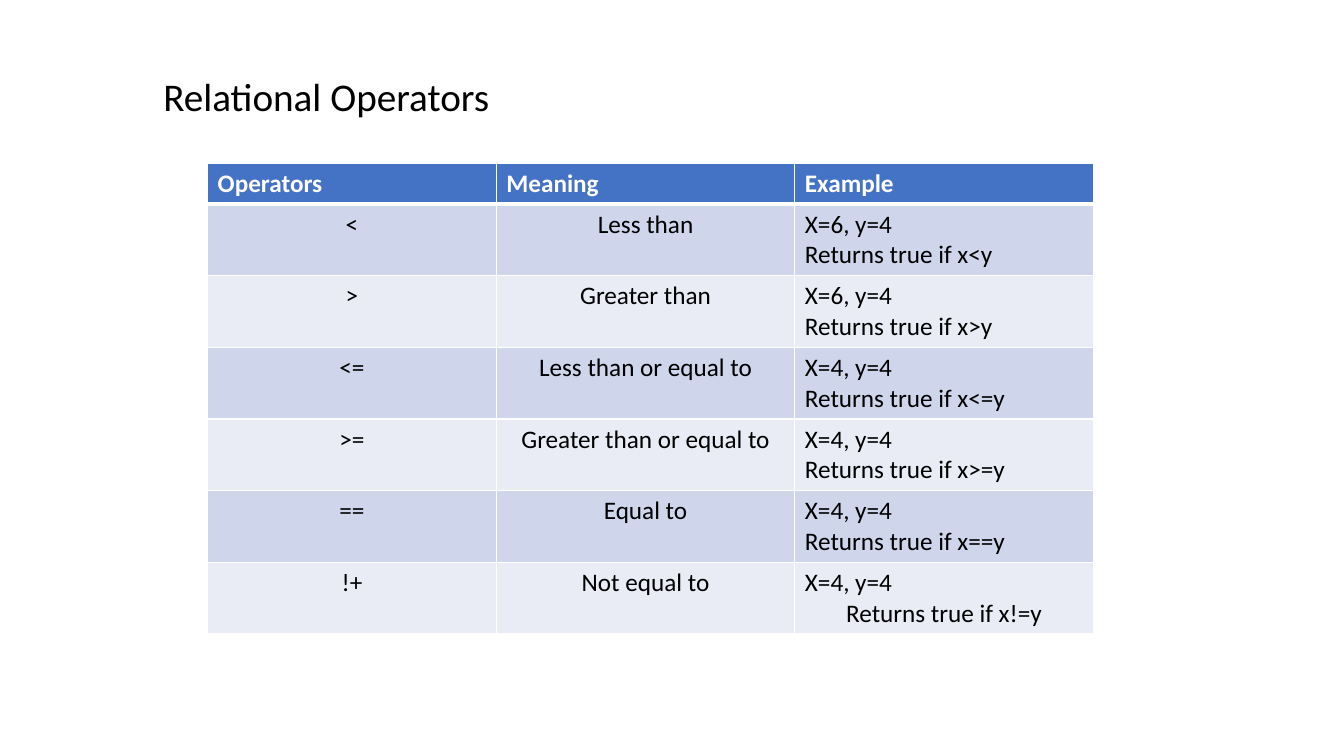
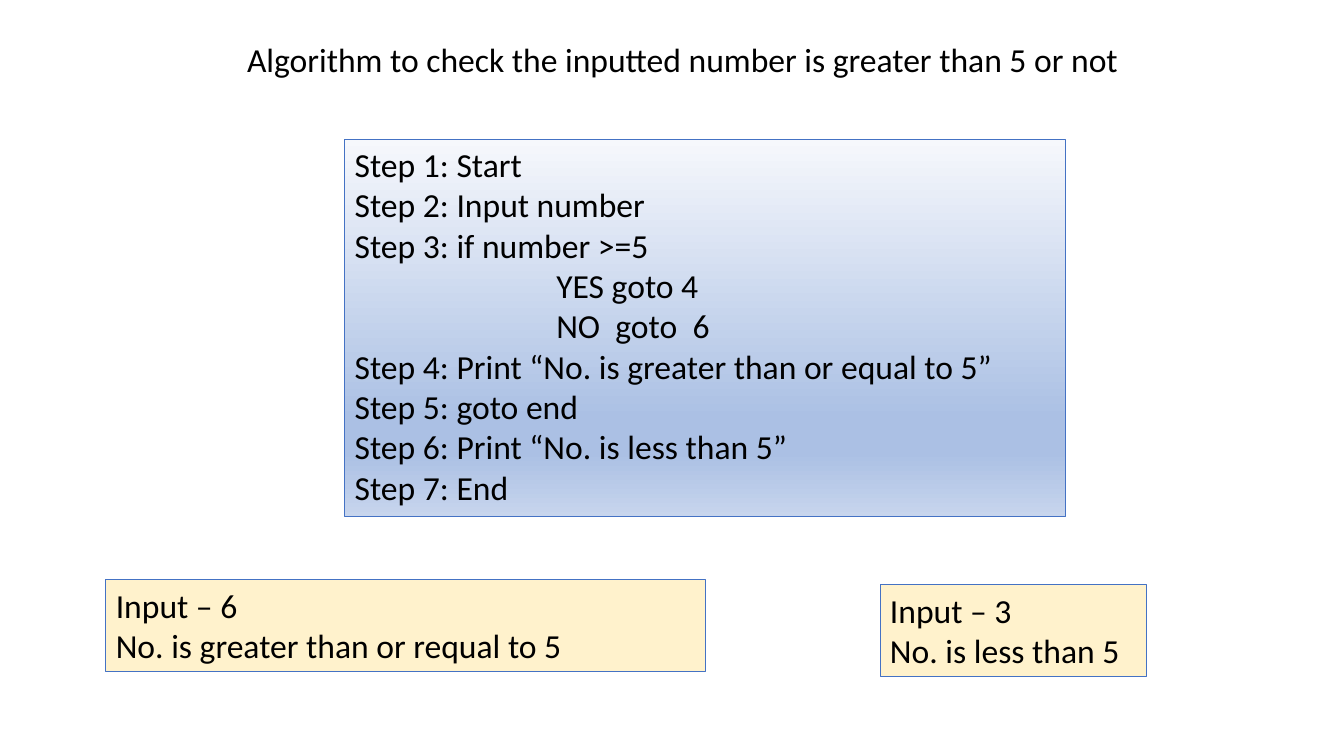
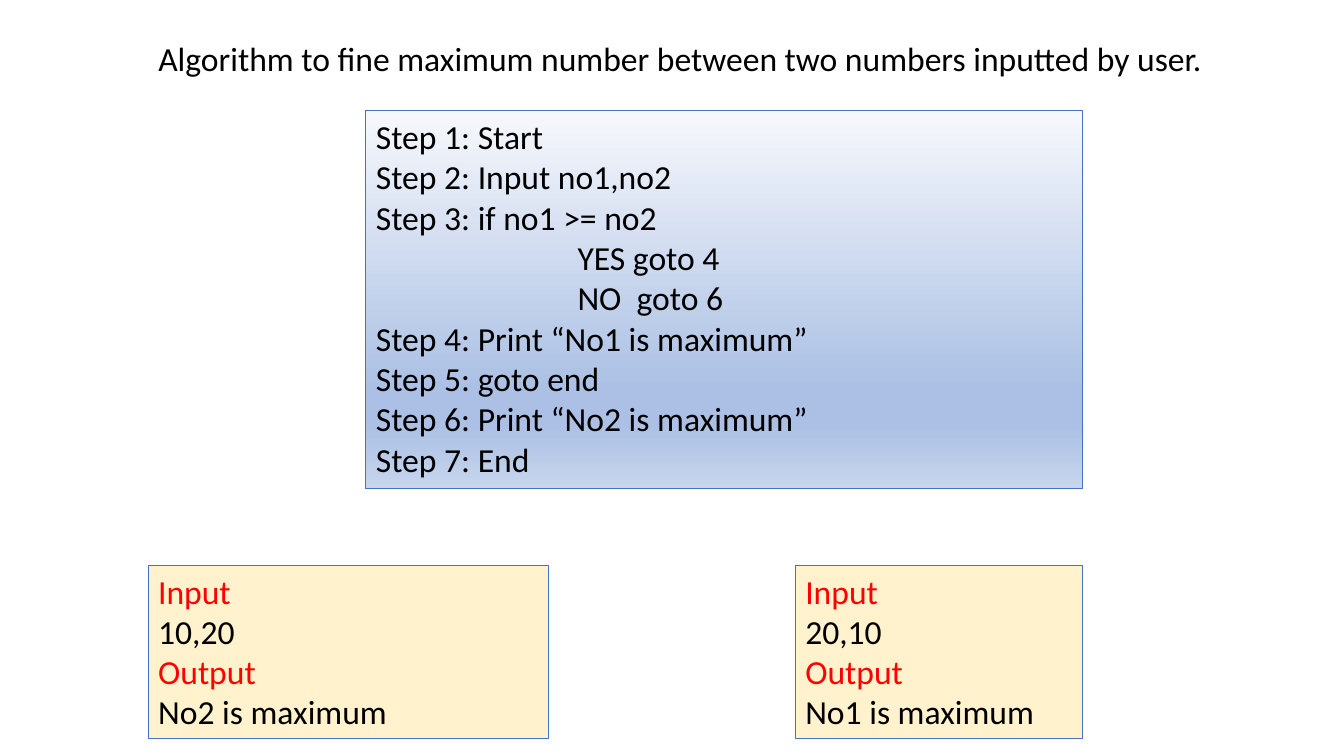
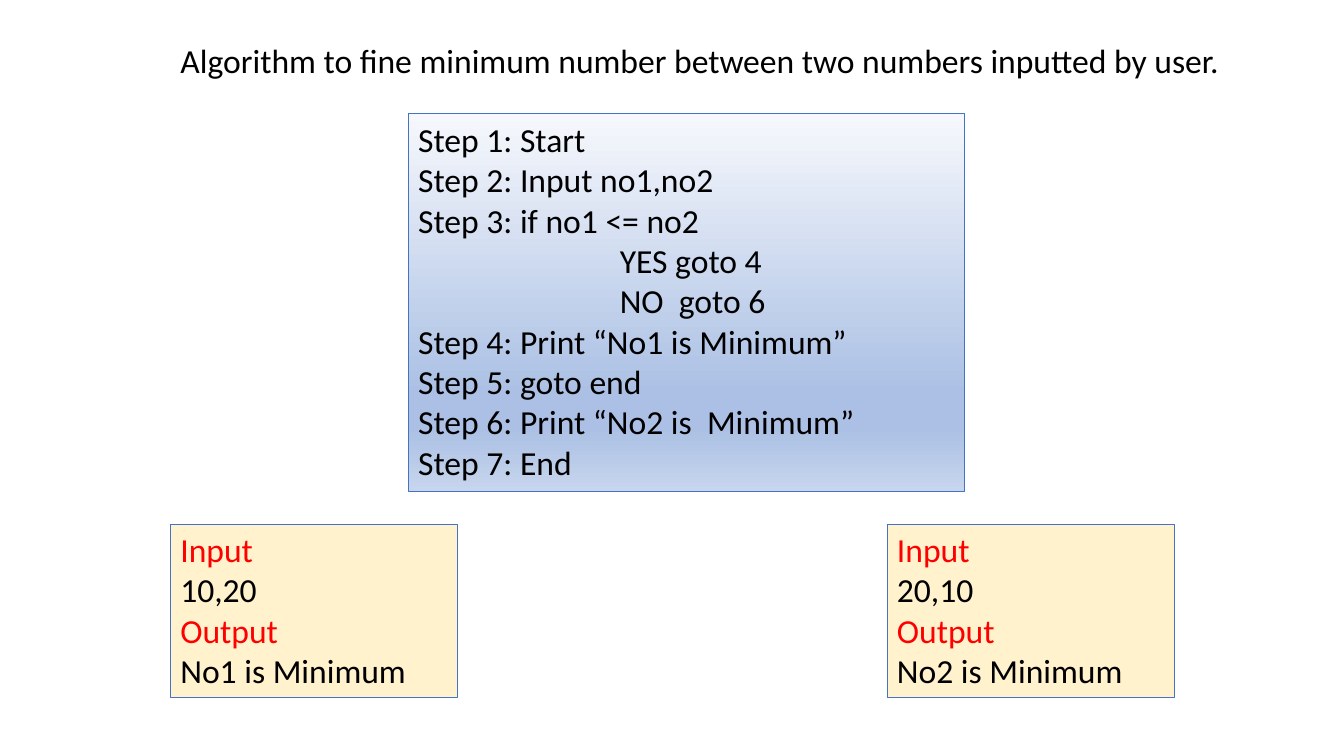
from typing import NamedTuple

from lxml.etree import SubElement
from pptx import Presentation
from pptx.dml.color import RGBColor
from pptx.enum.shapes import MSO_SHAPE
from pptx.enum.text import MSO_ANCHOR, MSO_AUTO_SIZE, PP_ALIGN
from pptx.oxml.ns import qn
from pptx.util import Inches, Pt

FONT = "Calibri"
BLACK, WHITE, RED = "000000", "FFFFFF", "FF0000"
BLUE, CREAM = "4472C4", "FFF2CC"
BANDS = ("CFD5EA", "E9EBF5")
STEP_GRADIENT = ((0, "F6F8FC"), (74, "ABC0E4"), (83, "ABC0E4"), (100, "C7D5ED"))
SLIDE_WIDTH, SLIDE_HEIGHT = Inches(13.333), Inches(7.5)
LINE_SHARE, PADDING_SHARE = 5.4, 1.33
BRANCH_INDENT = Inches(2)
COLUMN_SHARES = (0.326, 0.337, 0.337)
HEADER_SHARE = 0.087

OPERATORS = (
    ("<", "Less than", "X=6, y=4\nReturns true if x<y"),
    (">", "Greater than", "X=6, y=4\nReturns true if x>y"),
    ("<=", "Less than or equal to", "X=4, y=4\nReturns true if x<=y"),
    (">=", "Greater than or equal to", "X=4, y=4\nReturns true if x>=y"),
    ("==", "Equal to", "X=4, y=4\nReturns true if x==y"),
    ("!+", "Not equal to", "X=4, y=4\nReturns true if x!=y"),
)


class Box(NamedTuple):
    left: float
    top: float
    width: float
    height: float

    def lengths(self):
        return (
            int(SLIDE_WIDTH * self.left / 100),
            int(SLIDE_HEIGHT * self.top / 100),
            int(SLIDE_WIDTH * self.width / 100),
            int(SLIDE_HEIGHT * self.height / 100),
        )


def box_for(lines, left, top, width):
    return Box(left, top, width, lines * LINE_SHARE + PADDING_SHARE)


def color(hex_code):
    return RGBColor.from_string(hex_code)


def write(frame, text, size, ink=BLACK, bold=False, align=PP_ALIGN.LEFT):
    frame.text = text
    for paragraph in frame.paragraphs:
        paragraph.alignment = align
        for run in paragraph.runs:
            run.font.name = FONT
            run.font.size = Pt(size)
            run.font.bold = bold
            run.font.color.rgb = color(ink)


def titled_slide(deck, title, box, size=24):
    slide = deck.slides.add_slide(deck.slide_layouts[5])
    heading = slide.shapes.title
    heading.left, heading.top, heading.width, heading.height = box.lengths()
    frame = heading.text_frame
    frame.word_wrap = True
    frame.auto_size = MSO_AUTO_SIZE.NONE
    frame.vertical_anchor = MSO_ANCHOR.TOP
    write(frame, title, size)
    return slide


def add_panel(slide, text, box):
    panel = slide.shapes.add_shape(MSO_SHAPE.RECTANGLE, *box.lengths())
    panel.shadow.inherit = False
    panel.line.color.rgb = color(BLUE)
    panel.line.width = Pt(0.75)
    panel.text_frame.word_wrap = True
    panel.text_frame.vertical_anchor = MSO_ANCHOR.TOP
    write(panel.text_frame, text, 24)
    return panel


def fill_with_gradient(panel, stops):
    panel.fill.gradient()
    panel.fill.gradient_angle = 270
    stop_list = panel.element.spPr.find(".//" + qn("a:gsLst"))
    for old_stop in list(stop_list):
        stop_list.remove(old_stop)
    for position, hex_code in stops:
        stop = SubElement(stop_list, qn("a:gs"), pos=str(position * 1000))
        SubElement(stop, qn("a:srgbClr"), val=hex_code)


def add_steps(slide, steps, left, top, width):
    panel = add_panel(slide, "\n".join(steps), box_for(len(steps), left, top, width))
    fill_with_gradient(panel, STEP_GRADIENT)
    for paragraph in panel.text_frame.paragraphs:
        if not paragraph.text.startswith("Step"):
            properties = paragraph._p.get_or_add_pPr()
            properties.set("marL", str(BRANCH_INDENT))
            properties.set("indent", "0")


def add_example(slide, lines, left, top, width):
    panel = add_panel(slide, "\n".join(lines), box_for(len(lines), left, top, width))
    panel.fill.solid()
    panel.fill.fore_color.rgb = color(CREAM)
    for paragraph in panel.text_frame.paragraphs:
        if paragraph.text in ("Input", "Output"):
            paragraph.runs[0].font.color.rgb = color(RED)


def algorithm_steps(entry, condition, no_branch, yes_message, no_message):
    return (
        "Step 1: Start",
        f"Step 2: Input {entry}",
        f"Step 3: if {condition}",
        "YES goto 4",
        no_branch,
        f"Step 4: Print “{yes_message}”",
        "Step 5: goto end",
        f"Step 6: Print “{no_message}”",
        "Step 7: End",
    )


def sample_run(numbers, result):
    return "Input", numbers, "Output", result


def algorithm_slide(deck, title, title_place, steps, steps_place, examples):
    slide = titled_slide(deck, title, box_for(1, *title_place))
    add_steps(slide, steps, *steps_place)
    for lines, place in examples:
        add_example(slide, lines, *place)


def border_cell(cell, bottom_width):
    properties = cell._tc.get_or_add_tcPr()
    for side, width in (("L", 1), ("R", 1), ("T", 1), ("B", bottom_width)):
        edge = SubElement(properties, qn(f"a:ln{side}"), w=str(Pt(width)))
        SubElement(SubElement(edge, qn("a:solidFill")), qn("a:srgbClr"), val=WHITE)


def fill_cell(cell, hex_code, bottom_width=1):
    border_cell(cell, bottom_width)
    cell.fill.solid()
    cell.fill.fore_color.rgb = color(hex_code)


def add_operator_table(slide, box):
    left, top, width, height = box.lengths()
    table = slide.shapes.add_table(
        len(OPERATORS) + 1, len(COLUMN_SHARES), left, top, width, height
    ).table
    for column, share in zip(table.columns, COLUMN_SHARES):
        column.width = int(width * share)
    body_share = (1 - HEADER_SHARE) / len(OPERATORS)
    for index, row in enumerate(table.rows):
        row.height = int(height * (body_share if index else HEADER_SHARE))

    for cell, label in zip(table.rows[0].cells, ("Operators", "Meaning", "Example")):
        write(cell.text_frame, label, 18, WHITE, bold=True)
        fill_cell(cell, BLUE, bottom_width=3)

    aligns = (PP_ALIGN.CENTER, PP_ALIGN.CENTER, PP_ALIGN.LEFT)
    for index, entries in enumerate(OPERATORS):
        for cell, entry, align in zip(table.rows[index + 1].cells, entries, aligns):
            write(cell.text_frame, entry, 18, align=align)
            fill_cell(cell, BANDS[index % 2])
    last_example = table.cell(len(OPERATORS), 2)
    last_example.text_frame.paragraphs[-1].alignment = PP_ALIGN.CENTER


def main():
    deck = Presentation()
    deck.slide_width, deck.slide_height = SLIDE_WIDTH, SLIDE_HEIGHT

    operators = titled_slide(deck, "Relational Operators", Box(11.4, 8.93, 70, 7.6), 28)
    add_operator_table(operators, Box(15.45, 21.6, 65.9, 61.33))

    algorithm_slide(
        deck,
        "Algorithm to check the inputted number is greater than 5 or not",
        (17.63, 4.53, 66.4),
        algorithm_steps(
            "number", "number >=5", "NO  goto  6",
            "No. is greater than or equal to 5", "No. is less than 5",
        ),
        (25.65, 18.4, 53.65),
        (
            (("Input – 6", "No. is greater than or requal to 5"), (7.88, 76.67, 44.63)),
            (("Input – 3", "No. is less than 5"), (65.48, 77.33, 19.8)),
        ),
    )
    algorithm_slide(
        deck,
        "Algorithm to fine maximum number between two numbers inputted by user.",
        (11.03, 4.4, 82.88),
        algorithm_steps(
            "no1,no2", "no1 >= no2", "NO  goto 6", "No1 is maximum", "No2 is maximum"
        ),
        (27.23, 14.67, 53.33),
        (
            (sample_run("10,20", "No2 is maximum"), (11.03, 74.8, 29.78)),
            (sample_run("20,10", "No1 is maximum"), (59.18, 74.8, 21.38)),
        ),
    )
    algorithm_slide(
        deck,
        "Algorithm to fine minimum number between two numbers inputted by user.",
        (12.68, 4.67, 79.73),
        algorithm_steps(
            "no1,no2", "no1 <= no2", "NO  goto 6", "No1 is Minimum", "No2 is  Minimum"
        ),
        (30.38, 15.07, 41.4),
        (
            (sample_run("10,20", "No1 is Minimum"), (12.68, 69.33, 21.38)),
            (sample_run("20,10", "No2 is Minimum"), (66, 69.33, 21.38)),
        ),
    )
    deck.save("out.pptx")


if __name__ == "__main__":
    main()
